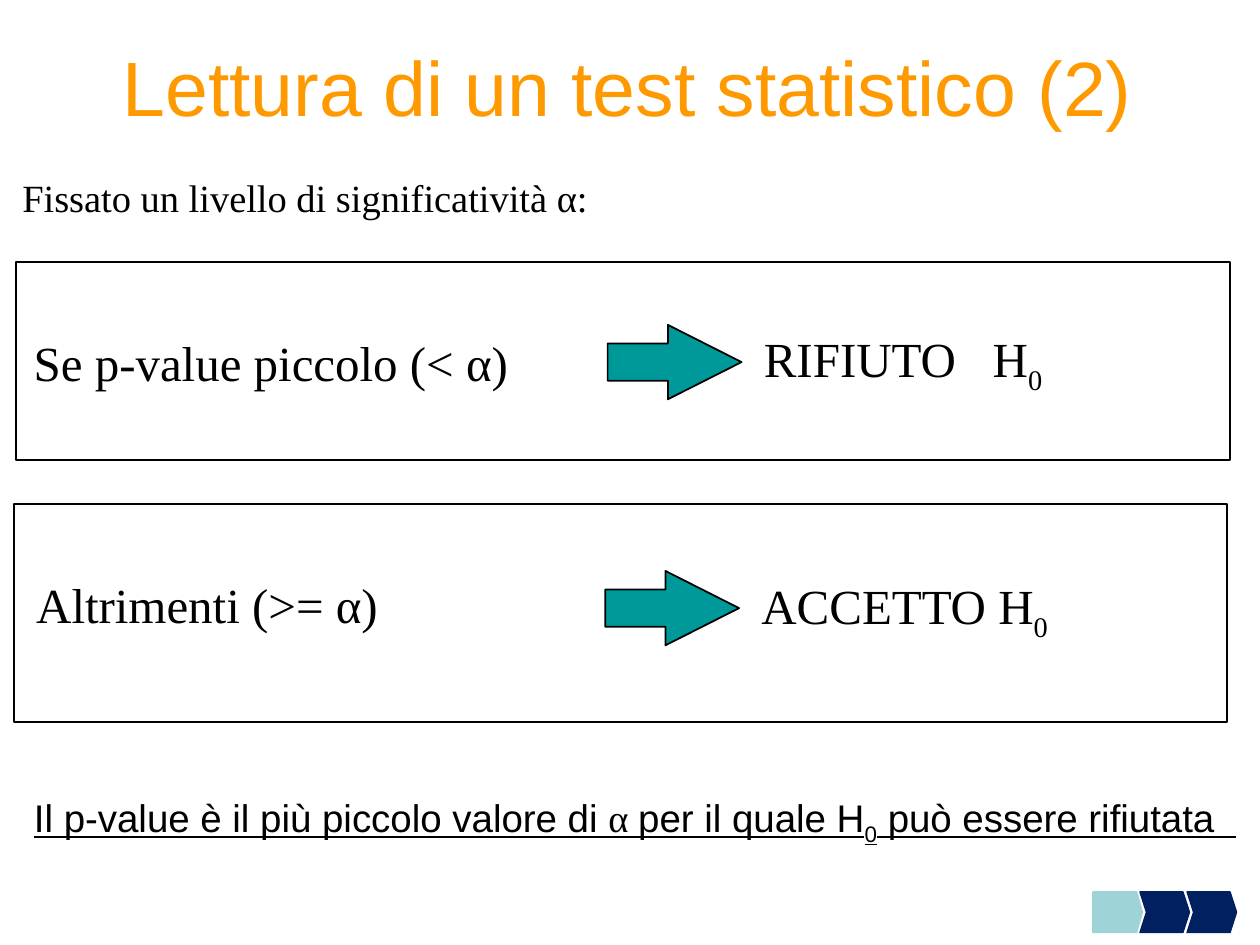
from pptx import Presentation
from pptx.dml.color import RGBColor as RGB
from pptx.enum.shapes import MSO_SHAPE as Kind
from pptx.enum.text import MSO_ANCHOR as Anchor, MSO_AUTO_SIZE as Fit, PP_ALIGN as Align
from pptx.util import Cm, Pt

ORANGE = RGB(0xFF, 0x99, 0x00)
BLACK = RGB(0x00, 0x00, 0x00)
TEAL = RGB(0x00, 0x99, 0x99)
NAVY = RGB(0x00, 0x20, 0x60)
AQUA = RGB(0x9E, 0xD3, 0xD7)
SANS = "Arial"
SERIF = "Times New Roman"


def add_run(para, text, size, face=SERIF, color=BLACK, under=None, sub=False):
    run = para.add_run()
    run.text = text
    font = run.font
    font.size = Pt(size)
    font.name = face
    font.color.rgb = color
    font.underline = under
    if sub:
        run._r.get_or_add_rPr().set("baseline", "-25000")


def add_title(slide, text):
    title = slide.shapes.title
    title.left, title.top = Cm(0.25), Cm(0.53)
    title.width, title.height = Cm(24.82), Cm(2.39)
    frame = title.text_frame
    frame.auto_size = Fit.NONE
    frame.vertical_anchor = Anchor.MIDDLE
    para = frame.paragraphs[0]
    para.alignment = Align.CENTER
    add_run(para, text, 44, SANS, ORANGE)


def add_text(shapes, box, anchor=Anchor.MIDDLE, align=Align.LEFT):
    frame = shapes.add_textbox(*map(Cm, box)).text_frame
    frame.word_wrap = True
    frame.vertical_anchor = anchor
    para = frame.paragraphs[0]
    para.alignment = align
    return para


def add_form(shapes, kind, box, fill, line, width, adjust=()):
    form = shapes.add_shape(kind, *map(Cm, box))
    form.shadow.inherit = False
    for i, value in enumerate(adjust):
        form.adjustments[i] = value
    if fill is None:
        form.fill.background()
    else:
        form.fill.solid()
        form.fill.fore_color.rgb = fill
    form.line.color.rgb = line
    form.line.width = Pt(width)


def add_rule(slide, left, top, height, case, case_box, arrow_top, result, result_top):
    shapes = slide.shapes.add_group_shape().shapes
    add_run(add_text(shapes, case_box), case, 28)
    arrow = (left + 11.92, arrow_top, 2.7, 1.5)
    add_form(shapes, Kind.RIGHT_ARROW, arrow, TEAL, BLACK, 1, (0.5, 0.99))
    para = add_text(shapes, (left + 14.82, result_top, 10.27, 3.33))
    add_run(para, result, 28)
    add_run(para, "0", 28, sub=True)
    add_form(shapes, Kind.RECTANGLE, (left, top, 24.46, height), None, BLACK, 1)


def add_note(slide):
    para = add_text(slide.shapes, (0.2, 15.88, 25.2, 1.19), Anchor.TOP, Align.CENTER)
    for text, face, sub in (
        ("Il p-value è il più piccolo valore di ", SANS, False),
        ("α ", SERIF, False),
        ("per il quale H", SANS, False),
        ("0", SANS, True),
        (" può essere rifiutata  ", SANS, False),
    ):
        add_run(para, text, 22, face, under=True, sub=sub)


def add_steps(slide):
    for i, (kind, fill, adjust) in enumerate((
        (Kind.PENTAGON, AQUA, 0.14),
        (Kind.CHEVRON, NAVY, 0.16),
        (Kind.CHEVRON, NAVY, 0.16),
    )):
        box = (22.03 + 0.95 * i, 17.98, 1, 0.82)
        add_form(slide.shapes, kind, box, fill, fill, 0.75, (adjust,))


def main():
    deck = Presentation()
    deck.slide_width, deck.slide_height = Cm(25.4), Cm(19.05)
    slide = deck.slides.add_slide(deck.slide_layouts[5])
    add_title(slide, "Lettura di un test statistico (2)")
    intro = add_text(slide.shapes, (0.2, 3.38, 25.2, 1.19), Anchor.TOP)
    add_run(intro, "Fissato un livello di significatività α:", 22)
    add_rule(slide, 0.33, 5.28, 3.99, "Se p-value piccolo (< α)",
             (0.43, 5.69, 13.69, 3.23), 6.55, "RIFIUTO   H", 5.64)
    add_rule(slide, 0.28, 10.16, 4.39, "Altrimenti (>= α)",
             (0.48, 10.57, 13.72, 3.23), 11.51, "ACCETTO H", 10.62)
    add_note(slide)
    add_steps(slide)
    deck.save("out.pptx")


if __name__ == "__main__":
    main()
